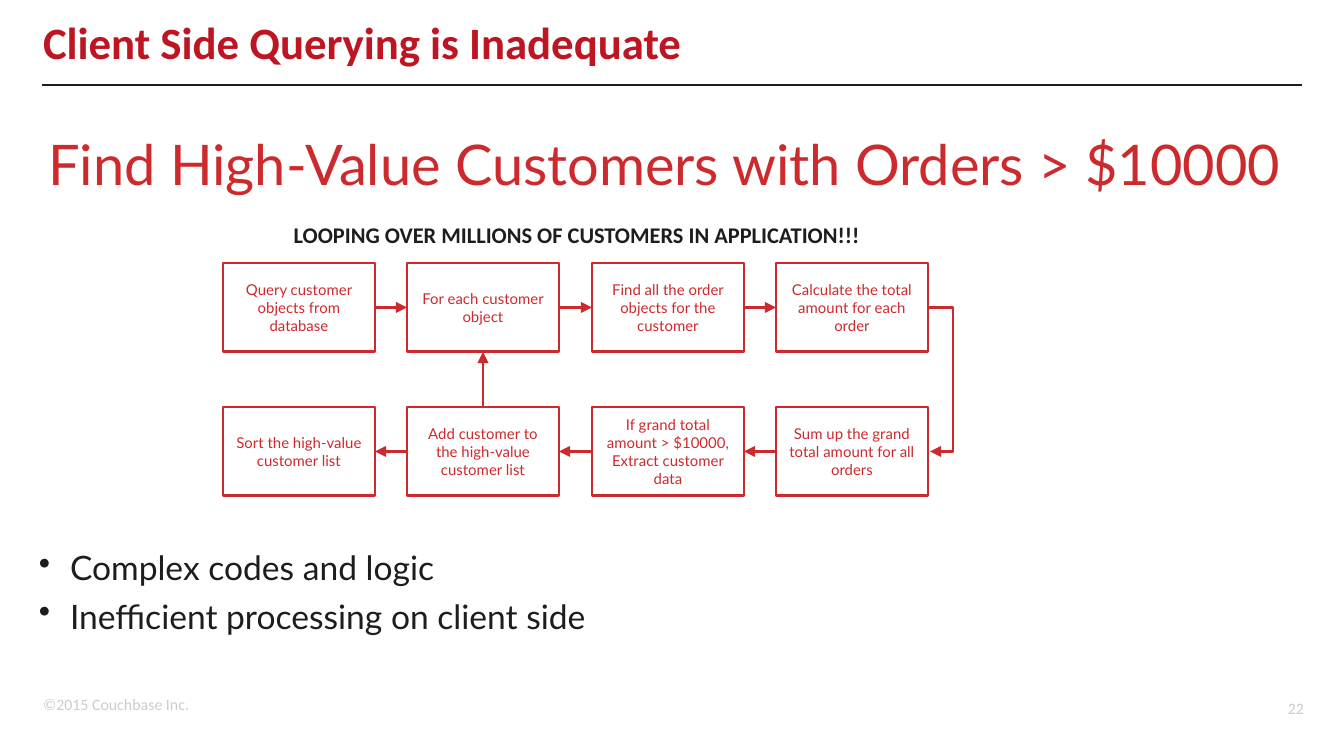
from lxml import etree
from pptx import Presentation
from pptx.dml.color import RGBColor
from pptx.enum.shapes import MSO_CONNECTOR, MSO_SHAPE
from pptx.enum.text import MSO_ANCHOR, PP_ALIGN
from pptx.oxml.ns import qn
from pptx.util import Emu, Pt

STRAIGHT, ELBOW = MSO_CONNECTOR.STRAIGHT, MSO_CONNECTOR.ELBOW
RECTANGLE = MSO_SHAPE.RECTANGLE
TOP, MIDDLE = MSO_ANCHOR.TOP, MSO_ANCHOR.MIDDLE
LEFT, CENTER, RIGHT = PP_ALIGN.LEFT, PP_ALIGN.CENTER, PP_ALIGN.RIGHT
TOP_SITE, LEFT_SITE, BOTTOM_SITE, RIGHT_SITE = range(4)

RED, TITLE_RED, DARK, GRAY, WHITE = "CC2A2D", "BE1523", "1E1C1C", "CCCCCC", "FFFFFF"
WIDE_INSETS, NARROW_INSETS = (13, 7), (9, 5)

TITLE = "Client Side Querying is Inadequate"
HEADING = "Find High-Value Customers with Orders > $10000"
CAPTION = "LOOPING OVER MILLIONS OF CUSTOMERS IN APPLICATION!!!"
COPYRIGHT = "©2015 Couchbase Inc."
PAGE_NUMBER = "22"
STEP_ROWS = [
    [
        "Query customer objects from database",
        "For each customer object",
        "Find all the order objects for the customer",
        "Calculate the total amount for each order",
    ],
    [
        "Sort the high-value customer list",
        "Add customer to the high-value customer list",
        "If grand total amount > $10000, Extract customer data",
        "Sum up the grand total amount for all orders",
    ],
]
BULLETS = ["Complex codes and logic", "Inefficient processing on client side"]

STEP_LEFT, STEP_TOP = 223, 263
STEP_WIDTH, STEP_HEIGHT = 152, 89
COLUMN_PITCH, ROW_PITCH = 184.4, 144
LOOP_REACH, LOOP_WIDTH = 25, 2


def px(value):
    return Emu(round(value * 914400 / 134.4))


def color(value):
    return RGBColor.from_string(value)


def write(shape, lines, size, font, ink, align=LEFT, anchor=TOP,
          insets=NARROW_INSETS, bold=False, wrap=True):
    frame = shape.text_frame
    frame.word_wrap = wrap
    frame.vertical_anchor = anchor
    frame.margin_left = frame.margin_right = px(insets[0])
    frame.margin_top = frame.margin_bottom = px(insets[1])
    for index, line in enumerate(lines):
        paragraph = frame.add_paragraph() if index else frame.paragraphs[0]
        paragraph.alignment = align
        run = paragraph.add_run()
        run.text = line
        run.font.size = Pt(size)
        run.font.name = font
        run.font.bold = bold
        run.font.color.rgb = color(ink)
    return frame.paragraphs


def add_text(box, lines, *style, **options):
    return write(slide.shapes.add_textbox(*map(px, box)), lines, *style, **options)


def add_line(start, end, ink, width, kind=STRAIGHT, arrow=True):
    connector = slide.shapes.add_connector(kind, *map(px, start + end))
    connector.line.color.rgb = color(ink)
    connector.line.width = Pt(width)
    if arrow:
        outline = connector.line._get_or_add_ln()
        etree.SubElement(outline, qn("a:tailEnd"), type="triangle")
    etree.SubElement(connector._element.spPr, qn("a:effectLst"))
    return connector


def add_step(column, row, text):
    left = round(STEP_LEFT + column * COLUMN_PITCH)
    top = STEP_TOP + row * ROW_PITCH
    step = slide.shapes.add_shape(
        RECTANGLE, *map(px, (left, top, STEP_WIDTH, STEP_HEIGHT)))
    step.shadow.inherit = False
    step.fill.solid()
    step.fill.fore_color.rgb = color(WHITE)
    step.line.color.rgb = color(RED)
    step.line.width = Pt(1.5)
    write(step, [text], 8, "Lato", RED, CENTER, MIDDLE)
    return step


def join(source, source_site, target, target_site):
    arrow = add_line((0, 0), (0, 0), RED, 1.25)
    arrow.begin_connect(source, source_site)
    arrow.end_connect(target, target_site)


presentation = Presentation()
presentation.slide_width, presentation.slide_height = px(1344), px(756)
slide = presentation.slides.add_slide(presentation.slide_layouts[6])

add_text((30, 688, 173, 32), [COPYRIGHT], 8.5, "Calibri", GRAY,
         insets=WIDE_INSETS, wrap=False)
add_text((1208, 688, 109, 40), [PAGE_NUMBER], 8.5, "Calibri", GRAY, RIGHT, MIDDLE,
         insets=WIDE_INSETS)
add_line((42, 85), (1302, 85), DARK, 1, arrow=False)
title = add_text((30, 7, 1176, 79), [TITLE], 24, "Calibri", TITLE_RED,
                 anchor=MIDDLE, insets=WIDE_INSETS, bold=True)
title[0].line_spacing = 0.8
add_text((30, 125, 1269, 78), [HEADING], 30, "Lato", RED, CENTER, wrap=False)
add_text((224, 216, 706, 38), [CAPTION], 12, "Calibri", DARK, CENTER, bold=True)

for paragraph in add_text((30, 496, 993, 191), BULLETS, 18, "Lato", DARK, anchor=MIDDLE):
    properties = paragraph._p.get_or_add_pPr()
    properties.set("marL", str(px(31)))
    properties.set("indent", str(px(-31)))
    etree.SubElement(properties, qn("a:buChar"), char="•")
    paragraph.space_after = Pt(4.5)

upper, lower = [
    [add_step(column, row, text) for column, text in enumerate(texts)]
    for row, texts in enumerate(STEP_ROWS)
]
for source, target in zip(upper, upper[1:]):
    join(source, RIGHT_SITE, target, LEFT_SITE)
for target, source in zip(lower, lower[1:]):
    join(source, LEFT_SITE, target, RIGHT_SITE)
join(lower[1], TOP_SITE, upper[1], BOTTOM_SITE)

turn_left = round(STEP_LEFT + 3 * COLUMN_PITCH) + STEP_WIDTH
turn_top = STEP_TOP + STEP_HEIGHT / 2
turn = add_line((turn_left, turn_top), (turn_left + LOOP_WIDTH, turn_top + ROW_PITCH),
                RED, 1.25, ELBOW)
adjustments = turn._element.spPr.find(qn("a:prstGeom")).get_or_add_avLst()
etree.SubElement(adjustments, qn("a:gd"), name="adj1",
                 fmla=f"val {LOOP_REACH * 100000 // LOOP_WIDTH}")

presentation.save("out.pptx")
